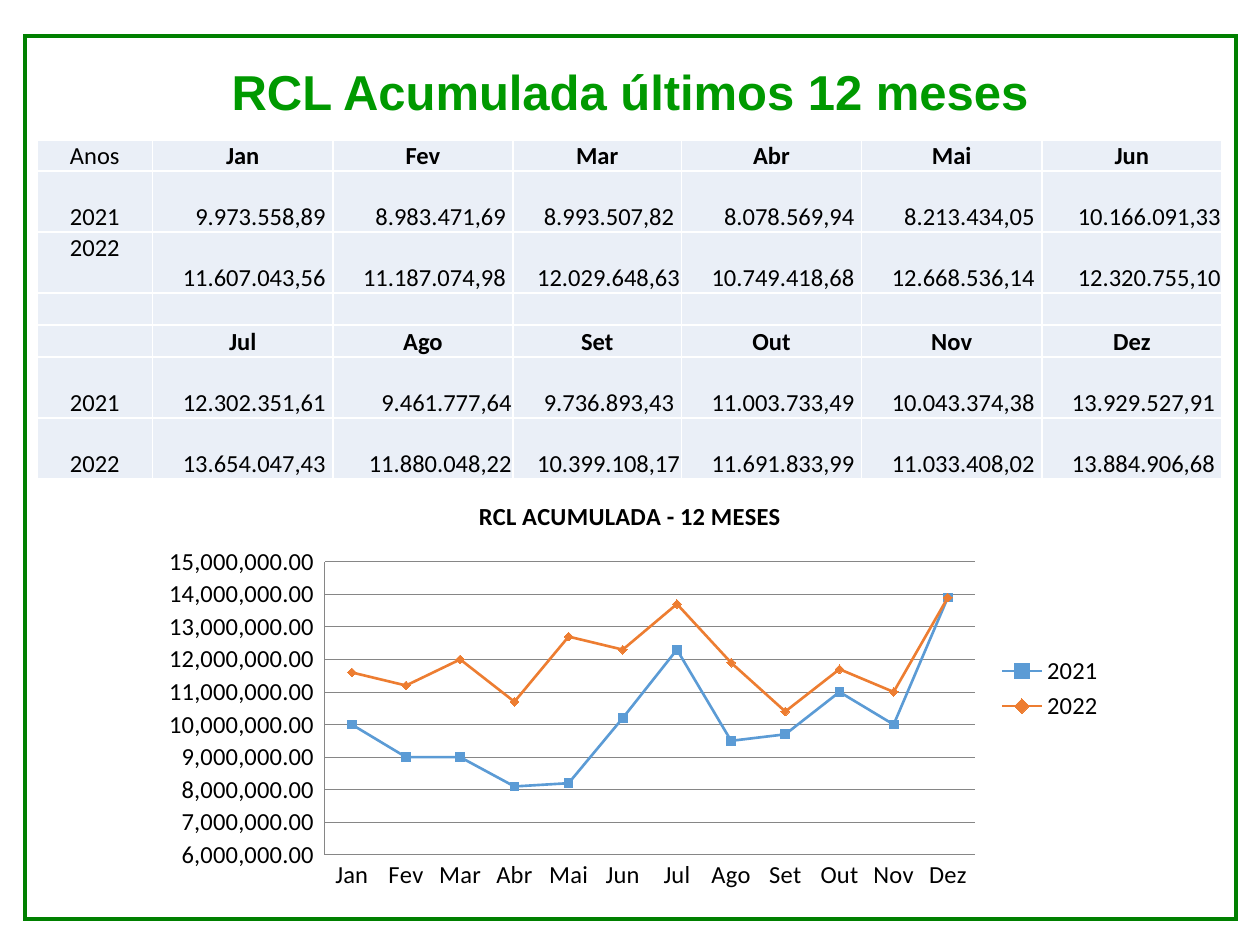
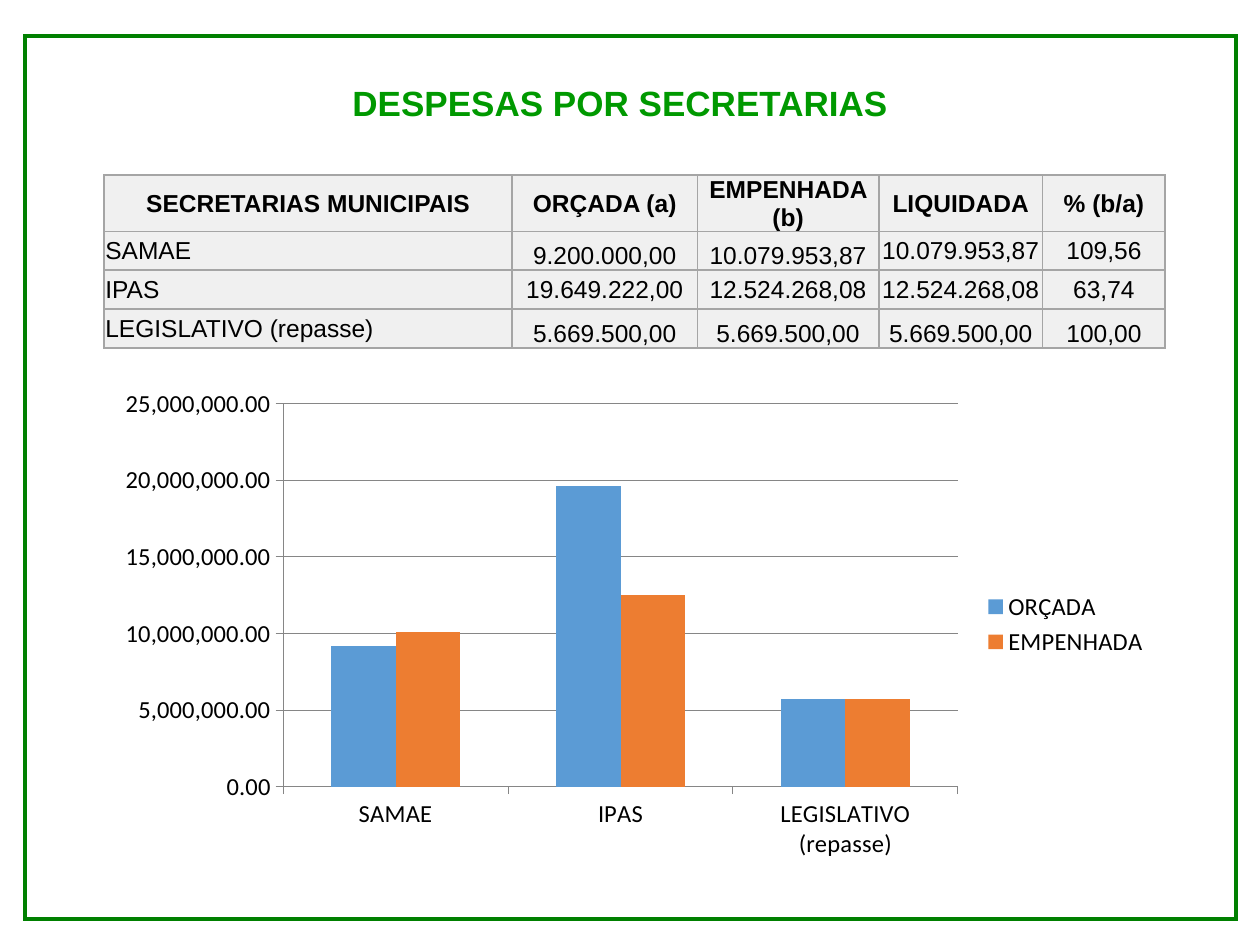
from lxml.etree import SubElement
from pptx import Presentation
from pptx.chart.data import CategoryChartData
from pptx.dml.color import RGBColor
from pptx.enum.chart import XL_CHART_TYPE, XL_LEGEND_POSITION, XL_MARKER_STYLE, XL_TICK_MARK
from pptx.enum.shapes import MSO_SHAPE
from pptx.enum.text import MSO_ANCHOR, MSO_AUTO_SIZE, PP_ALIGN
from pptx.oxml.ns import qn
from pptx.util import Pt

COLOURS = {
    "frame": "008000", "title": "009900", "text": "000000", "white": "FFFFFF",
    "pale_blue": "EAEFF7", "pale_grey": "F0F0F0", "grey": "A5A5A5",
    "axis": "868686", "blue": "5B9BD5", "orange": "ED7D31",
}
ALIGNS = {"l": PP_ALIGN.LEFT, "c": PP_ALIGN.CENTER, "r": PP_ALIGN.RIGHT, "f": PP_ALIGN.RIGHT}
ANCHORS = {"t": MSO_ANCHOR.TOP, "m": MSO_ANCHOR.MIDDLE, "b": MSO_ANCHOR.BOTTOM}
SERIES_STYLES = (("blue", XL_MARKER_STYLE.SQUARE), ("orange", XL_MARKER_STYLE.DIAMOND))


def colour(name):
    return RGBColor.from_string(COLOURS[name])


def rounded_amount(text):
    return round(float(text.replace(".", "").replace(",", ".")), -5)


class PageBuilder:
    """Holds the shared style and the current slide."""

    def __init__(self):
        self.deck = Presentation()
        self.deck.slide_width, self.deck.slide_height = Pt(720), Pt(540)
        self.page = None

    def add_page(self, title, place, size, spacing=1.0):
        self.page = self.deck.slides.add_slide(self.deck.slide_layouts[5])
        box = self.page.shapes.title
        box.left, box.top, box.width, box.height = map(Pt, place)
        frame = box.text_frame
        frame.text = title
        frame.auto_size = MSO_AUTO_SIZE.NONE
        frame.vertical_anchor = MSO_ANCHOR.MIDDLE
        para = frame.paragraphs[0]
        para.alignment = PP_ALIGN.CENTER
        para.line_spacing = spacing
        self.style_font(para.runs[0].font, size, "Arial", True, "title")
        self.add_border()

    def style_font(self, font, size=14, face="Calibri", bold=False, shade="text"):
        font.size, font.name, font.bold = Pt(size), face, bold
        font.color.rgb = colour(shade)

    def add_border(self):
        box = self.page.shapes.add_shape(MSO_SHAPE.RECTANGLE, Pt(14.2), Pt(20.4), Pt(691.9), Pt(504.7))
        box.shadow.inherit = False
        box.fill.background()
        box.line.color.rgb = colour("frame")
        box.line.width = Pt(2.25)
        SubElement(box._element.spPr.find(qn("a:ln")), qn("a:miter"), lim="800000")

    def add_table(self, left, top, widths, heights, rows, face, fill, border):
        table = self.page.shapes.add_table(
            len(rows), len(widths), Pt(left), Pt(top), Pt(sum(widths)), Pt(sum(heights))).table
        table.first_row = table.horz_banding = False
        for column, width in zip(table.columns, widths):
            column.width = Pt(width)
        for row, height, (texts, aligns, anchors, bold) in zip(table.rows, heights, rows):
            row.height = Pt(height)
            for cell, text, align, anchor in zip(row.cells, texts, aligns, anchors):
                self.fill_cell(cell, text, align, anchor, face, bold and text != "Anos")
                cell.fill.solid()
                cell.fill.fore_color.rgb = colour(fill)
                self.add_cell_borders(cell, border)

    def fill_cell(self, cell, text, align, anchor, face, bold):
        cell.margin_left = cell.margin_top = Pt(0.7)
        cell.margin_right = Pt(4 if align == "r" else 0.7)
        cell.margin_bottom = Pt(0)
        cell.vertical_anchor = ANCHORS[anchor]
        para = cell.text_frame.paragraphs[0]
        para.text = text
        para.alignment = ALIGNS[align]
        for span in para.runs:
            self.style_font(span.font, face=face, bold=bold)
        if not text:
            SubElement(para._p, qn("a:endParaRPr"), sz="1400")

    def add_cell_borders(self, cell, shade):
        properties = cell._tc.get_or_add_tcPr()
        for position, side in enumerate(("a:lnL", "a:lnR", "a:lnT", "a:lnB")):
            line = SubElement(properties, qn(side), w=str(Pt(1)))
            SubElement(SubElement(line, qn("a:solidFill")), qn("a:srgbClr"), val=COLOURS[shade])
            properties.insert(position, line)

    def add_chart(self, kind, place, categories, series, plot_place, number_format):
        data = CategoryChartData(number_format="#,##0.00")
        data.categories = categories
        for name, values in series:
            data.add_series(name, values)
        chart = self.page.shapes.add_chart(kind, *map(Pt, place), data).chart
        self.style_font(chart.font)
        chart.has_title = False
        chart.has_legend = True
        chart.legend.position = XL_LEGEND_POSITION.RIGHT
        chart.legend.include_in_layout = False
        self.style_font(chart.legend.font)
        for axis in (chart.category_axis, chart.value_axis):
            self.style_font(axis.tick_labels.font)
            axis.format.line.color.rgb = colour("axis")
            axis.format.line.width = Pt(0.5)
            axis.major_tick_mark = XL_TICK_MARK.OUTSIDE
            axis.minor_tick_mark = XL_TICK_MARK.NONE
        gridlines = chart.value_axis.major_gridlines.format.line
        gridlines.color.rgb = colour("axis")
        gridlines.width = Pt(0.5)
        chart.value_axis.tick_labels.number_format = number_format
        chart.value_axis.tick_labels.number_format_is_linked = False
        chart.plots[0].vary_by_categories = False
        self.place_plot(chart, place, plot_place)
        return chart

    def place_plot(self, chart, place, plot_place):
        left, top, width, height = place
        plot_left, plot_top, plot_width, plot_height = plot_place
        shares = ((plot_left - left) / width, (plot_top - top) / height,
                  plot_width / width, plot_height / height)
        area = chart._chartSpace.chart.plotArea
        for layout in area.findall(qn("c:layout")):
            area.remove(layout)
        layout = SubElement(area, qn("c:layout"))
        area.insert(0, layout)
        manual = SubElement(layout, qn("c:manualLayout"))
        settings = [("layoutTarget", "inner"), ("xMode", "edge"), ("yMode", "edge")]
        for tag, value in settings + list(zip("xywh", shares)):
            SubElement(manual, qn("c:" + tag), val=str(value))

    def add_line_chart(self, title, limits, step, *chart_parts):
        chart = self.add_chart(XL_CHART_TYPE.LINE_MARKERS, *chart_parts)
        chart.has_title = True
        chart.chart_title.text_frame.text = title
        self.style_font(chart.chart_title.text_frame.paragraphs[0].runs[0].font, bold=True)
        chart.value_axis.minimum_scale, chart.value_axis.maximum_scale = limits
        chart.value_axis.major_unit = step
        for axis in (chart.category_axis, chart.value_axis):
            axis.major_tick_mark = XL_TICK_MARK.NONE
        for series, (shade, marker) in zip(chart.plots[0].series, SERIES_STYLES):
            series.smooth = False
            series.format.line.color.rgb = colour(shade)
            series.format.line.width = Pt(1.5)
            series.marker.style = marker
            series.marker.size = 5
            series.marker.format.fill.solid()
            series.marker.format.fill.fore_color.rgb = colour(shade)
            series.marker.format.line.color.rgb = colour(shade)

    def add_column_chart(self, limit, step, *chart_parts):
        chart = self.add_chart(XL_CHART_TYPE.COLUMN_CLUSTERED, *chart_parts)
        chart.value_axis.minimum_scale, chart.value_axis.maximum_scale = 0, limit
        chart.value_axis.major_unit = step
        chart.plots[0].gap_width = 150
        chart.plots[0].overlap = 0
        for series, (shade, _) in zip(chart.plots[0].series, SERIES_STYLES):
            series.format.fill.solid()
            series.format.fill.fore_color.rgb = colour(shade)


def build_revenue_page(builder):
    months = "Jan Fev Mar Abr Mai Jun Jul Ago Set Out Nov Dez".split()
    revenue = {
        "2021": ["9.973.558,89", "8.983.471,69", "8.993.507,82", "8.078.569,94",
                 "8.213.434,05", "10.166.091,33", "12.302.351,61", "9.461.777,64",
                 "9.736.893,43", "11.003.733,49", "10.043.374,38", "13.929.527,91"],
        "2022": ["11.607.043,56", "11.187.074,98", "12.029.648,63", "10.749.418,68",
                 "12.668.536,14", "12.320.755,10", "13.654.047,43", "11.880.048,22",
                 "10.399.108,17", "11.691.833,99", "11.033.408,02", "13.884.906,68"],
    }
    rows = [
        (["Anos"] + months[:6], "c" * 7, "b" * 7, True),
        (["2021"] + revenue["2021"][:6], "crrrrrf", "b" * 7, False),
        (["2022"] + revenue["2022"][:6], "crrfrrf", "tbbbbbb", False),
        ([""] * 7, "c" * 7, "b" * 7, False),
        ([""] + months[6:], "c" * 7, "b" * 7, True),
        (["2021"] + revenue["2021"][6:], "crfrrrr", "b" * 7, False),
        (["2022"] + revenue["2022"][6:], "crffrrr", "b" * 7, False),
    ]
    builder.add_page("RCL Acumulada últimos 12 meses", (36, 20.2, 648, 67.7), 28, 0.9)
    builder.add_table(21.2, 80, [66, 103, 103, 96.2, 103, 103, 103],
                      [17.8, 34.9, 34.9, 18.2, 18.2, 34.9, 34.9],
                      rows, "Calibri", "pale_blue", "white")
    series = [(year, list(map(rounded_amount, texts))) for year, texts in revenue.items()]
    builder.add_line_chart("RCL ACUMULADA - 12 MESES", (6000000, 15000000), 1000000,
                           (82.1, 274, 555.8, 239), months, series,
                           (185.6, 321, 371.6, 167.6), "#,##0.00_)")


def build_expense_page(builder):
    header = ["SECRETARIAS MUNICIPAIS", "ORÇADA (a)", "EMPENHADA (b)", "LIQUIDADA", "% (b/a)"]
    expenses = [
        ["SAMAE", "9.200.000,00", "10.079.953,87", "10.079.953,87", "109,56"],
        ["IPAS", "19.649.222,00", "12.524.268,08", "12.524.268,08", "63,74"],
        ["LEGISLATIVO (repasse)", "5.669.500,00", "5.669.500,00", "5.669.500,00", "100,00"],
    ]
    rows = [(header, "c" * 5, "m" * 5, True)]
    for texts, anchors in zip(expenses, ("mbbmm", "mmmmm", "mbbbb")):
        rows.append((texts, "lcccc", anchors, False))
    builder.add_page("DESPESAS POR SECRETARIAS", (150.2, 42.6, 408.2, 31.7), 20)
    builder.add_table(59.5, 100, [233.2, 105.8, 103.7, 93.7, 70], [31.8, 22.2, 22.2, 22.2],
                      rows, "Arial", "pale_grey", "grey")
    names, budgeted, committed = list(zip(*expenses))[:3]
    series = [("ORÇADA ", map(rounded_amount, budgeted)),
              ("EMPENHADA ", map(rounded_amount, committed))]
    builder.add_column_chart(25000000, 5000000, (59.8, 216.7, 607, 280.1), names, series,
                             (161.8, 230.7, 385.6, 218.9), "#,##0.00")


def main():
    builder = PageBuilder()
    build_revenue_page(builder)
    build_expense_page(builder)
    builder.deck.save("out.pptx")


if __name__ == "__main__":
    main()
